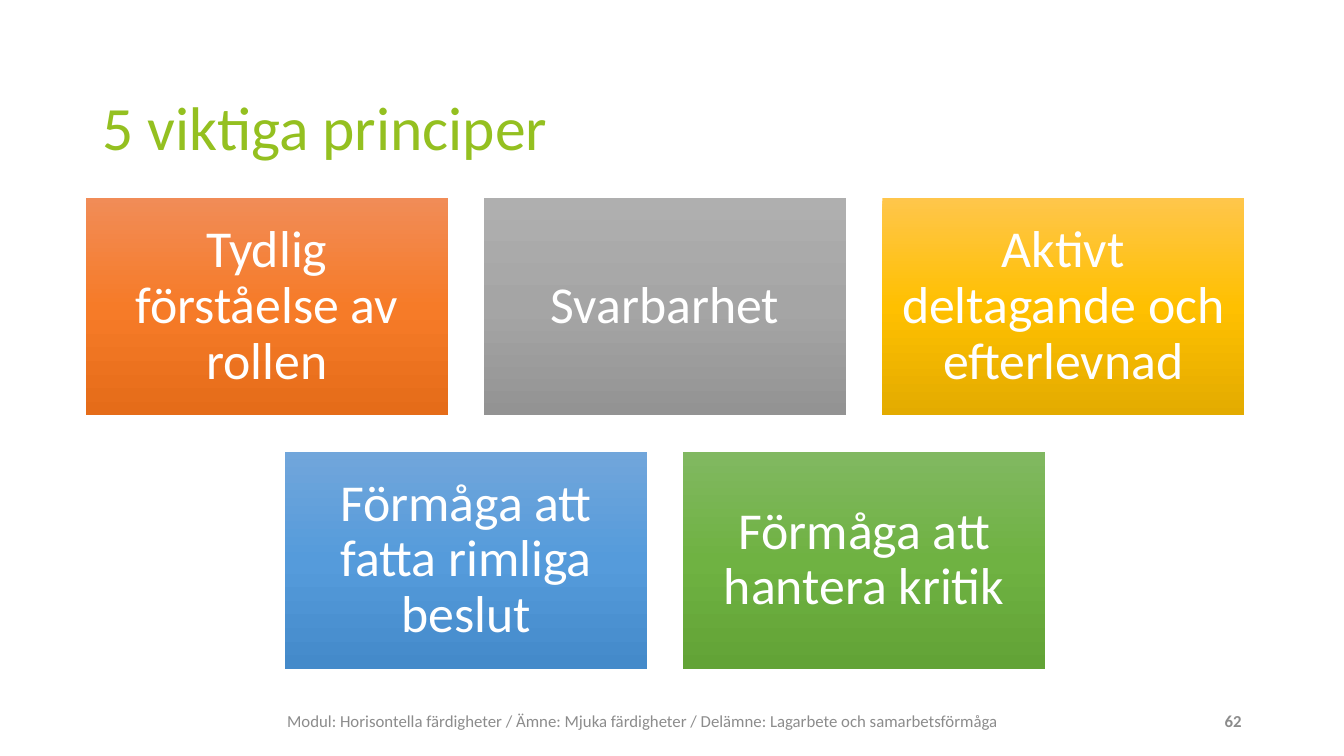
from copy import deepcopy
from dataclasses import dataclass

from pptx import Presentation
from pptx import util as u
from pptx.dml.color import RGBColor
from pptx.enum import shapes, text


@dataclass(frozen=True)
class Theme:
    font: str = "Calibri"
    title_color: str = "94C020"
    footer_color: str = "8C8C8C"
    card_text_color: str = "FFFFFF"
    title_size: int = 44
    card_size: int = 37
    footer_size: int = 12


@dataclass(frozen=True)
class Box:
    left: float
    top: float
    width: float
    height: float

    def lengths(self):
        return [u.Cm(side) for side in (self.left, self.top, self.width, self.height)]


THEME = Theme()
COLUMNS = 3
GAP_RATIO = 0.1
HEIGHT_RATIO = 0.6
PRINCIPLES = [
    ("Tydlig förståelse av rollen", ("F18C57", "F67B28", "E56C19")),
    ("Svarbarhet", ("AFAFAF", "A5A5A5", "939393")),
    ("Aktivt deltagande och efterlevnad", ("FFC64B", "FFC000", "E3AB00")),
    ("Förmåga att fatta rimliga beslut", ("71A6DB", "559BDB", "448ACA")),
    ("Förmåga att hantera kritik", ("81B861", "6FB242", "62A336")),
]


def apply(target, values):
    for name, value in values.items():
        setattr(target, name, value)


def write(shape, wording, size, color, align, spacing=1.0, inset=None, bold=False):
    frame = shape.text_frame
    apply(frame, {"word_wrap": True, "vertical_anchor": text.MSO_ANCHOR.MIDDLE})
    if inset is not None:
        sides = ("left", "top", "right", "bottom")
        apply(frame, {f"margin_{side}": u.Cm(inset) for side in sides})
    para = frame.paragraphs[0]
    apply(para, {"alignment": align, "line_spacing": spacing})
    span = para.add_run()
    span.text = wording
    apply(span.font, {"name": THEME.font, "size": u.Pt(size), "bold": bold})
    span.font.color.rgb = RGBColor.from_string(color)


def fill_gradient(shape, colors):
    shape.fill.gradient()
    shape.fill.gradient_angle = 270
    first = shape.fill.gradient_stops[0]._gs
    first.addnext(deepcopy(first))
    positions = (0, 0.5, 1)
    for stop, color, position in zip(shape.fill.gradient_stops, colors, positions):
        stop.color.rgb = RGBColor.from_string(color)
        stop.position = position


def add_title(page, box):
    title = page.shapes.add_textbox(*box.lengths())
    write(title, "5 viktiga principer", THEME.title_size, THEME.title_color,
          text.PP_ALIGN.LEFT, spacing=0.9)


def add_card(page, box, wording, colors):
    card = page.shapes.add_shape(shapes.MSO_SHAPE.RECTANGLE, *box.lengths())
    card.shadow.inherit = False
    card.line.fill.background()
    fill_gradient(card, colors)
    write(card, wording, THEME.card_size, THEME.card_text_color,
          text.PP_ALIGN.CENTER, spacing=0.9, inset=0.38)


def add_principles(page, box):
    width = box.width / (COLUMNS + (COLUMNS - 1) * GAP_RATIO)
    height = width * HEIGHT_RATIO
    gap = width * GAP_RATIO
    for start in range(0, len(PRINCIPLES), COLUMNS):
        row = PRINCIPLES[start:start + COLUMNS]
        row_width = len(row) * (width + gap) - gap
        left = box.left + (box.width - row_width) / 2
        top = box.top + start // COLUMNS * (height + gap)
        for column, (wording, colors) in enumerate(row):
            card_box = Box(left + column * (width + gap), top, width, height)
            add_card(page, card_box, wording, colors)


def add_footer(page, box):
    number_width = 1.27
    module = page.shapes.add_textbox(
        *Box(box.left, box.top, box.width - number_width - 0.2, box.height).lengths())
    write(module,
          "Modul: Horisontella färdigheter / Ämne: Mjuka färdigheter / "
          "Delämne: Lagarbete och samarbetsförmåga",
          THEME.footer_size, THEME.footer_color, text.PP_ALIGN.CENTER)
    number = page.shapes.add_textbox(
        *Box(box.left + box.width - number_width, box.top + 0.33,
             number_width, 1.02).lengths())
    write(number, "62", THEME.footer_size, THEME.footer_color,
          text.PP_ALIGN.RIGHT, bold=True)


def main():
    deck = Presentation()
    apply(deck, {"slide_width": u.Cm(33.87), "slide_height": u.Cm(19.05)})
    page = deck.slides.add_slide(deck.slide_layouts[6])
    add_title(page, Box(2.33, 1.88, 29.21, 2.8))
    add_principles(page, Box(2.16, 4.99, 29.2, 11.86))
    add_footer(page, Box(2.33, 17.32, 29.21, 1.68))
    deck.save("out.pptx")


if __name__ == "__main__":
    main()
